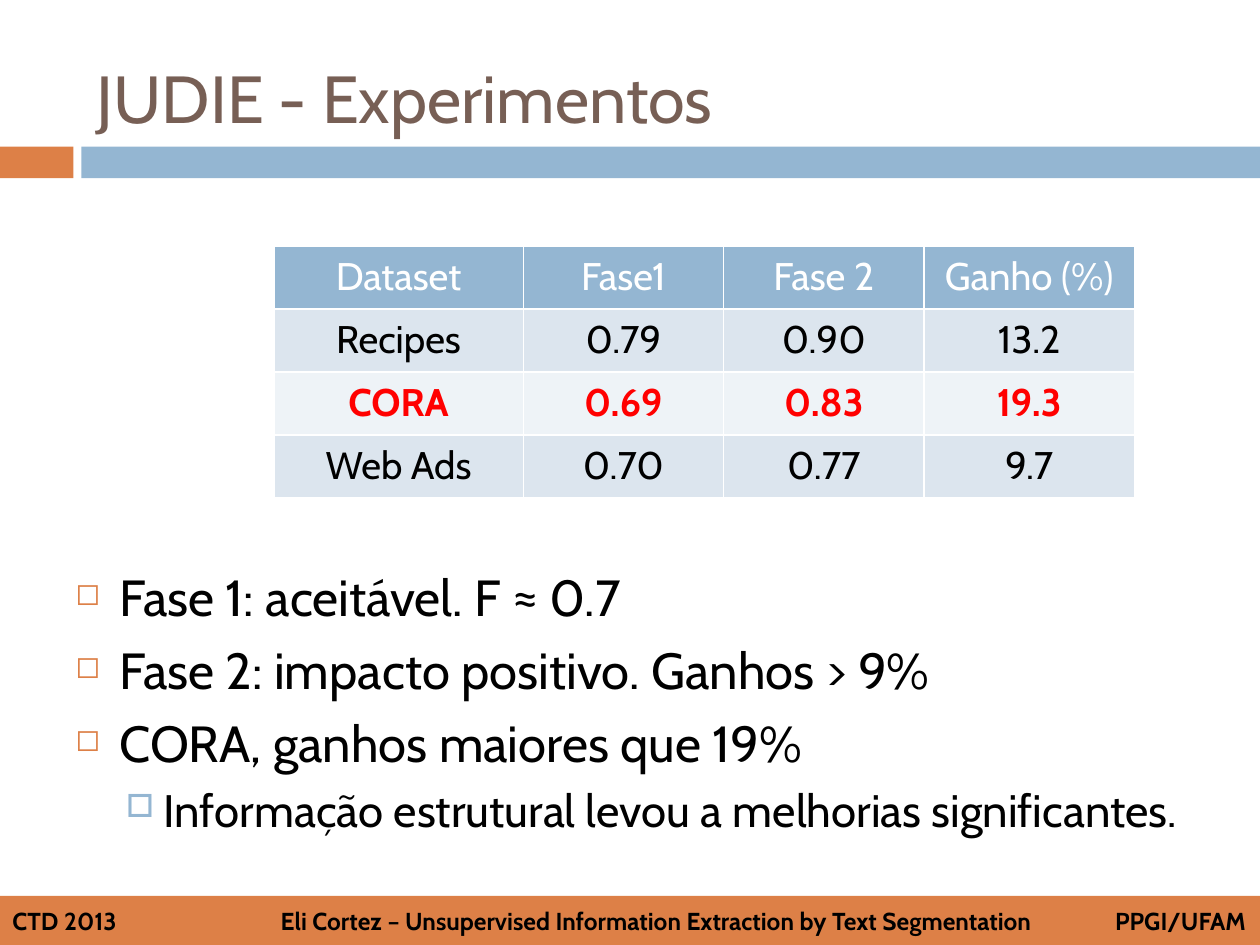
from lxml import etree
from pptx import Presentation
from pptx.dml.color import RGBColor
from pptx.enum import shapes, text
from pptx.oxml import ns
from pptx.util import Pt

ORANGE, BLUE, BROWN = "DD8047", "94B6D2", "775F55"
BLACK, WHITE, RED = "000000", "FFFFFF", "FF0000"
BANDS = ["DCE5EE", "EEF3F7"]

TITLE = "JUDIE - Experimentos"
ROWS = [
    ("Dataset", "Fase1", "Fase 2", "Ganho (%)"),
    ("Recipes", "0.79", "0.90", "13.2"),
    ("CORA", "0.69", "0.83", "19.3"),
    ("Web Ads", "0.70", "0.77", "9.7"),
]
COLS = [142.5, 114.5, 114.5, 120.25]
BEST = "CORA"
POINTS = [
    (0, [("Fase 1: aceitável. F ", "Cabin"), ("≈ ", "Calibri"), ("0.7", "Cabin")]),
    (0, [("Fase 2: impacto positivo. Ganhos > 9%", "Cabin")]),
    (0, [("CORA, ganhos maiores que 19%", "Cabin")]),
    (1, [("Informação estrutural levou a melhorias significantes.", "Cabin")]),
]
LEVELS = [
    dict(size=29, before=7, left=25.2, hang=25.2, mark="◻", color=ORANGE, scale=60),
    dict(size=26, before=5.5, left=50.4, hang=21.6, mark="□", color=BLUE, scale=70),
]
FOOT = ["CTD 2013",
        "Eli Cortez – Unsupervised Information Extraction by Text Segmentation",
        "PPGI/UFAM"]
STOPS = [("ctr", 368), ("r", 705)]


def rgb(code):
    return RGBColor.from_string(code)


def write(para, words, size, color=BLACK, font="Cabin", bold=False, align="LEFT"):
    run = para.add_run()
    run.text = words
    para.alignment = getattr(text.PP_ALIGN, align)
    run.font.name, run.font.size, run.font.bold = font, Pt(size), bold
    run.font.color.rgb = rgb(color)


def node(parent, tag, **attrs):
    return etree.SubElement(parent, ns.qn("a:" + tag),
                            {key: str(val) for key, val in attrs.items()})


def bar(slide, x, y, w, h, color):
    shape = slide.shapes.add_shape(shapes.MSO_SHAPE.RECTANGLE, Pt(x), Pt(y), Pt(w), Pt(h))
    shape.shadow.inherit = False
    shape.fill.solid()
    shape.fill.fore_color.rgb = rgb(color)
    shape.line.fill.background()
    return shape


def bullet(para, left, hang, mark, color, scale):
    props = para._p.get_or_add_pPr()
    props.set("marL", str(Pt(left)))
    props.set("indent", str(-Pt(hang)))
    node(node(props, "buClr"), "srgbClr", val=color)
    node(props, "buSzPct", val=scale * 1000)
    node(props, "buChar", char=mark)


def border(cell):
    """Draw a thin white line on all four sides, ahead of the cell's fill."""
    props = cell._tc.get_or_add_tcPr()
    for spot, side in enumerate(["lnL", "lnR", "lnT", "lnB"]):
        line = node(props, side, w=Pt(1))
        node(node(line, "solidFill"), "srgbClr", val=WHITE)
        props.insert(spot, line)


def add_title(slide):
    title = slide.shapes.title
    title.left, title.top, title.width, title.height = Pt(48), Pt(16.5), Pt(642), Pt(78)
    frame = title.text_frame
    frame.vertical_anchor = text.MSO_ANCHOR.MIDDLE
    write(frame.paragraphs[0], TITLE, 38, BROWN)


def add_foot(slide):
    frame = bar(slide, 0, 512, 720, 28, ORANGE).text_frame
    frame.vertical_anchor = text.MSO_ANCHOR.MIDDLE
    para = frame.paragraphs[0]
    write(para, "\t".join(FOOT), 14, bold=True)
    tabs = node(para._p.get_or_add_pPr(), "tabLst")
    for kind, x in STOPS:
        node(tabs, "tab", pos=Pt(x), algn=kind)


def add_grid(slide):
    high = 36
    grid = slide.shapes.add_table(len(ROWS), len(COLS), Pt(156.5), Pt(140.5),
                                  Pt(sum(COLS)), Pt(high * len(ROWS))).table
    for col, wide in zip(grid.columns, COLS):
        col.width = Pt(wide)
    for r, row in enumerate(ROWS):
        grid.rows[r].height = Pt(high)
        best = row[0] == BEST
        color = WHITE if r == 0 else RED if best else BLACK
        for c, words in enumerate(row):
            cell = grid.cell(r, c)
            cell.margin_left = cell.margin_right = Pt(8.6)
            cell.margin_top = cell.margin_bottom = Pt(4.3)
            cell.fill.solid()
            cell.fill.fore_color.rgb = rgb(BANDS[(r - 1) % 2] if r else BLUE)
            border(cell)
            write(cell.text_frame.paragraphs[0], words, 22, color,
                  bold=best, align="CENTER")


def add_points(slide):
    frame = slide.shapes.add_textbox(Pt(36), Pt(319.5), Pt(648), Pt(178)).text_frame
    frame.word_wrap = True
    for i, (level, runs) in enumerate(POINTS):
        style = dict(LEVELS[level])
        size, before = style.pop("size"), style.pop("before")
        para = frame.add_paragraph() if i else frame.paragraphs[0]
        para.level = level
        para.space_before = Pt(before)
        for words, font in runs:
            write(para, words, size, font=font)
        bullet(para, **style)


def main():
    deck = Presentation()
    deck.slide_width, deck.slide_height = Pt(720), Pt(540)
    slide = deck.slides.add_slide(deck.slide_layouts[5])
    bar(slide, 0, 83.75, 42, 18, ORANGE)
    bar(slide, 46.5, 83.75, 673.5, 18, BLUE)
    add_foot(slide)
    add_title(slide)
    add_points(slide)
    add_grid(slide)
    deck.save("out.pptx")


if __name__ == "__main__":
    main()
